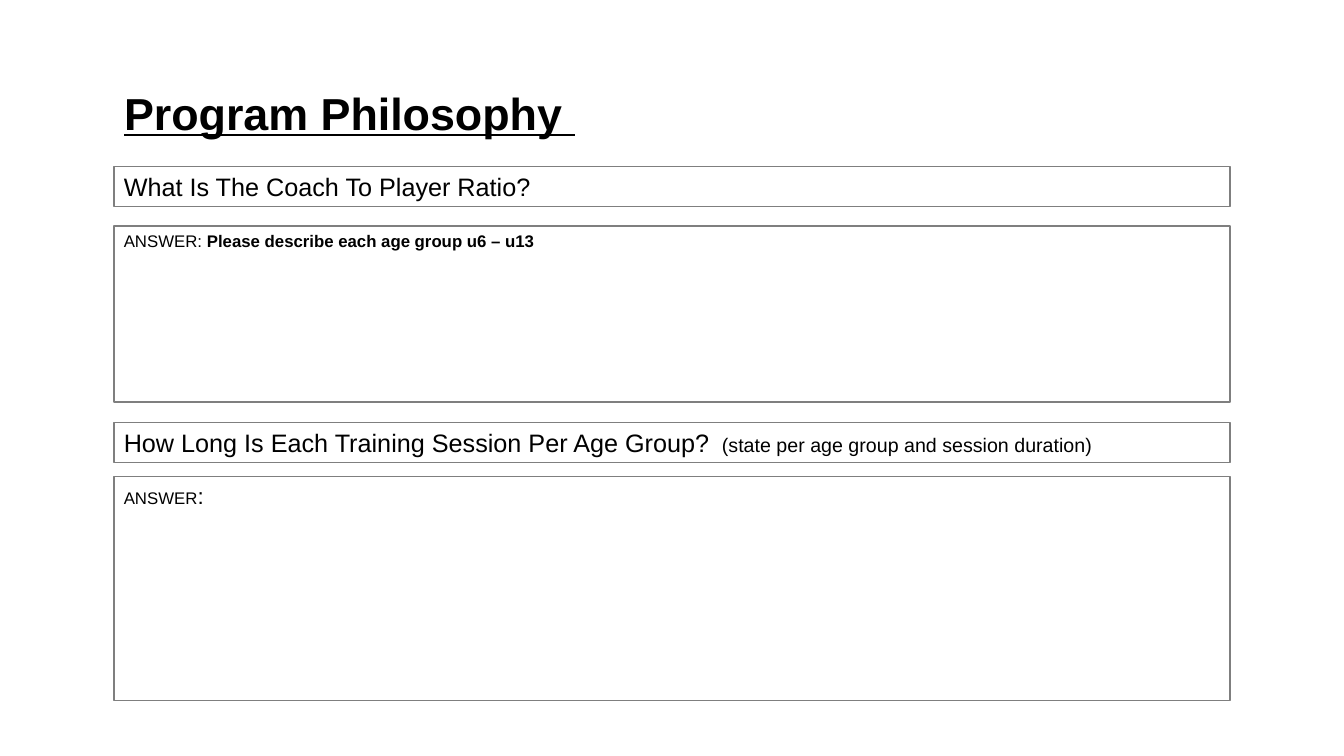
import pptx
import pptx.dml.color
import pptx.enum.shapes
import pptx.enum.text
import pptx.util

Inches = pptx.util.Inches
LEFT, WIDTH = 1.13, 11.07
QUESTION_HEIGHT = 0.4


def color(value):
    return pptx.dml.color.RGBColor.from_string(value)


def add_run(paragraph, text, size, bold=False, underline=False):
    run = paragraph.add_run()
    run.text = text
    run.font.name = "Arial"
    run.font.size = pptx.util.Pt(size)
    run.font.bold = bold
    run.font.underline = underline
    run.font.color.rgb = color("000000")


def set_frame(text_frame, anchor):
    text_frame.word_wrap = True
    text_frame.auto_size = pptx.enum.text.MSO_AUTO_SIZE.NONE
    text_frame.vertical_anchor = anchor
    text_frame.margin_left = text_frame.margin_right = Inches(0.1)
    text_frame.margin_top = text_frame.margin_bottom = Inches(0.05)
    paragraph = text_frame.paragraphs[0]
    paragraph.alignment = pptx.enum.text.PP_ALIGN.LEFT
    return paragraph


def place_title(slide, left, top, width, height):
    title = slide.shapes.title
    title.left, title.top = Inches(left), Inches(top)
    title.width, title.height = Inches(width), Inches(height)
    paragraph = set_frame(title.text_frame, pptx.enum.text.MSO_ANCHOR.MIDDLE)
    paragraph.line_spacing = 0.9
    add_run(paragraph, "Program Philosophy ", 32, bold=True, underline=True)


def add_box(slide, left, top, width, height, runs):
    shape = slide.shapes.add_shape(
        pptx.enum.shapes.MSO_SHAPE.RECTANGLE,
        Inches(left), Inches(top), Inches(width), Inches(height))
    shape.shadow.inherit = False
    shape.fill.solid()
    shape.fill.fore_color.rgb = color("FFFFFF")
    shape.line.color.rgb = color("7F7F7F")
    shape.line.width = pptx.util.Pt(1)
    paragraph = set_frame(shape.text_frame, pptx.enum.text.MSO_ANCHOR.TOP)
    for run in runs:
        add_run(paragraph, *run)


def add_question(slide, left, top, width, height, gap, question, answer):
    """Stack a question bar above its answer box within the given box."""
    add_box(slide, left, top, width, QUESTION_HEIGHT, question)
    offset = QUESTION_HEIGHT + gap
    add_box(slide, left, top + offset, width, height - offset, answer)


def main():
    presentation = pptx.Presentation()
    presentation.slide_width = Inches(13.33)
    presentation.slide_height = Inches(7.5)
    slide = presentation.slides.add_slide(presentation.slide_layouts[5])

    # Title
    place_title(slide, LEFT, 0.66, 11.81, 0.98)

    # Coach to player ratio
    add_question(
        slide, LEFT, 1.65, WIDTH, 2.34, 0.19,
        [("What Is The Coach To Player Ratio?", 18)],
        [("ANSWER: ", 12),
         ("Please describe each age group u6 – u13", 12, True)])

    # Training session length
    add_question(
        slide, LEFT, 4.19, WIDTH, 2.76, 0.14,
        [("How Long Is Each Training Session Per Age Group? ", 18),
         (" (state per age group and session duration)", 14)],
        [("ANSWER", 12), (":", 16)])

    presentation.save("out.pptx")


if __name__ == "__main__":
    main()
